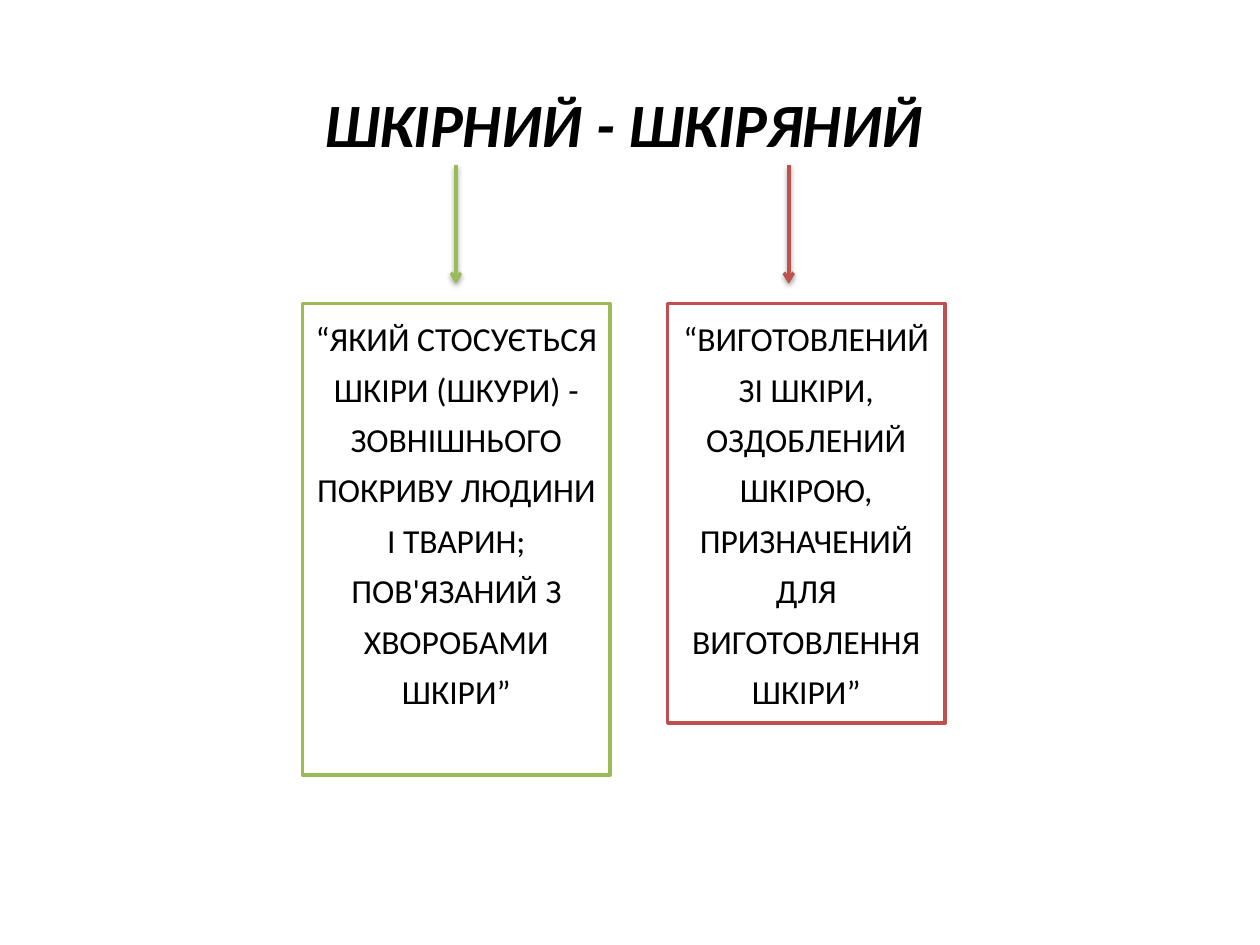
from dataclasses import dataclass

from lxml import etree
from pptx import Presentation
from pptx.dml.color import RGBColor
from pptx.enum.shapes import MSO_CONNECTOR
from pptx.enum.text import MSO_ANCHOR, PP_ALIGN
from pptx.oxml.ns import qn
from pptx.util import Cm, Pt

STRAIGHT = MSO_CONNECTOR.STRAIGHT
CENTER = PP_ALIGN.CENTER
TOP = MSO_ANCHOR.TOP
MIDDLE = MSO_ANCHOR.MIDDLE
TITLE_ONLY = 5


@dataclass(frozen=True)
class Theme:
    font: str = "Calibri"
    text: RGBColor = RGBColor(0x00, 0x00, 0x00)
    paper: RGBColor = RGBColor(0xFF, 0xFF, 0xFF)
    green: RGBColor = RGBColor(0x9B, 0xBB, 0x59)
    red: RGBColor = RGBColor(0xC0, 0x50, 0x4D)
    title_size: int = 44
    body_size: int = 24
    line_width: int = 2


THEME = Theme()
ARROW_TOP, ARROW_BOTTOM, BOX_TOP = 3.33, 5.72, 6.12

# meaning, colour, arrow x, box left, box width, box height (cm)
MEANINGS = (
    ("“який стосується шкіри (шкури) - зовнішнього покриву людини і тварин; "
     "пов'язаний з хворобами шкіри”", THEME.green, 9.19, 6.1, 6.2, 9.5),
    ("“виготовлений зі шкіри, оздоблений шкірою, призначений для "
     "виготовлення шкіри”", THEME.red, 15.9, 13.46, 5.59, 8.46),
)


def write_small_caps(frame, text, size, bold=None, italic=None):
    frame.word_wrap = True
    paragraph = frame.paragraphs[0]
    paragraph.text = text
    paragraph.alignment = CENTER
    font = paragraph.font
    font.name, font.size = THEME.font, Pt(size)
    font.bold, font.italic = bold, italic
    font.color.rgb = THEME.text
    paragraph._p.pPr.find(qn("a:defRPr")).set("cap", "small")
    for run in paragraph.runs:
        run._r.get_or_add_rPr().set("cap", "small")


def style_line(line, color):
    line.color.rgb = color
    line.width = Pt(THEME.line_width)


def add_title(slide, text):
    title = slide.shapes.title
    title.left, title.top = Cm(1.27), Cm(0.76)
    title.width, title.height = Cm(22.86), Cm(3.18)
    title.text_frame.vertical_anchor = MIDDLE
    write_small_caps(title.text_frame, text, THEME.title_size, True, True)


def add_meaning_box(slide, text, color, left, width, height):
    box = slide.shapes.add_textbox(Cm(left), Cm(BOX_TOP), Cm(width), Cm(height))
    box.fill.solid()
    box.fill.fore_color.rgb = THEME.paper
    style_line(box.line, color)
    box.text_frame.vertical_anchor = TOP
    write_small_caps(box.text_frame, text, THEME.body_size)


def add_soft_shadow(shape_properties):
    effects = etree.SubElement(shape_properties, qn("a:effectLst"))
    shadow = etree.SubElement(effects, qn("a:outerShdw"), blurRad=str(Pt(3.1)),
                              dist=str(Pt(1.6)), dir="5400000", rotWithShape="0")
    shade = etree.SubElement(shadow, qn("a:srgbClr"), val="000000")
    etree.SubElement(shade, qn("a:alpha"), val="38000")


def add_arrow(slide, x, color):
    arrow = slide.shapes.add_connector(
        STRAIGHT, Cm(x), Cm(ARROW_TOP), Cm(x), Cm(ARROW_BOTTOM))
    style_line(arrow.line, color)
    etree.SubElement(arrow.line._get_or_add_ln(), qn("a:tailEnd"), type="arrow")
    add_soft_shadow(arrow._element.spPr)


def main():
    deck = Presentation()
    deck.slide_width, deck.slide_height = Cm(25.4), Cm(19.05)
    slide = deck.slides.add_slide(deck.slide_layouts[TITLE_ONLY])
    add_title(slide, "шкірний - шкіряний ")
    for text, color, arrow_x, left, width, height in MEANINGS:
        add_meaning_box(slide, text, color, left, width, height)
        add_arrow(slide, arrow_x, color)
    deck.save("out.pptx")


if __name__ == "__main__":
    main()
